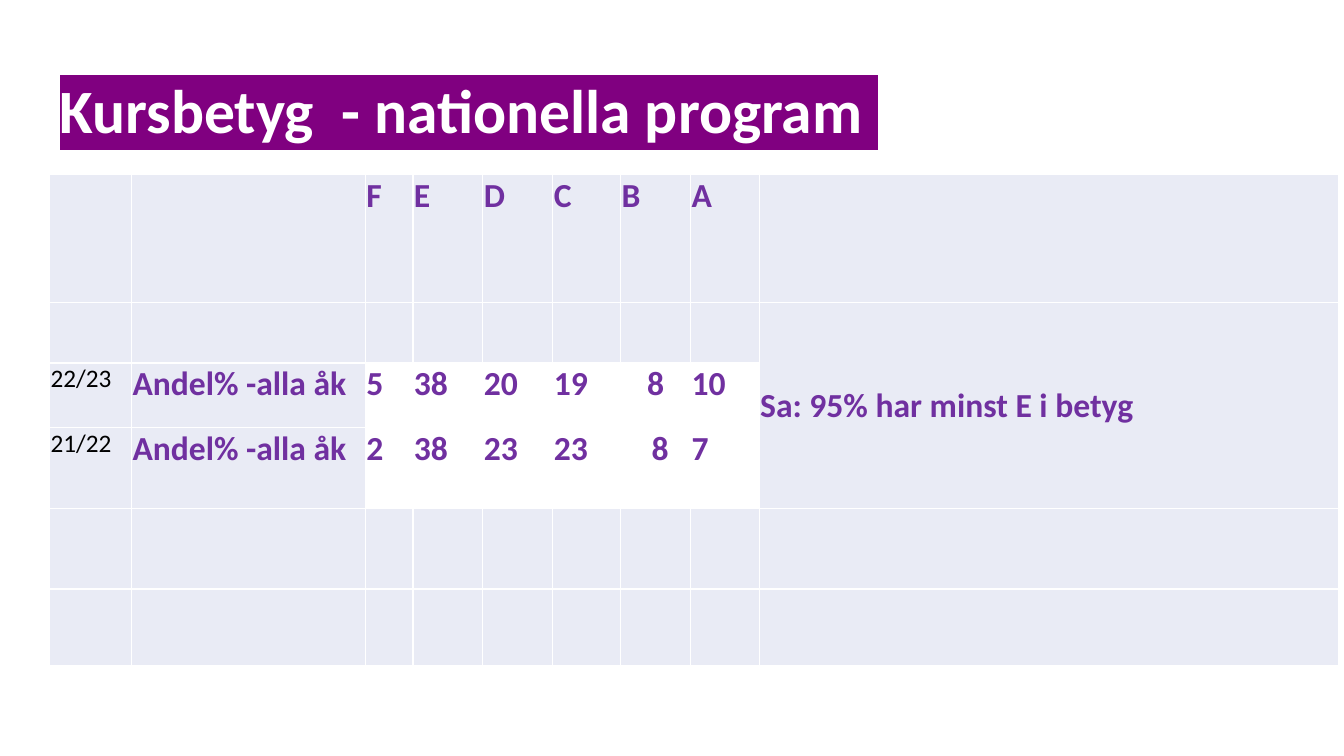
from lxml import etree
from pptx import Presentation
from pptx.dml.color import RGBColor
from pptx.enum.text import MSO_ANCHOR, PP_ALIGN
from pptx.oxml.ns import qn
from pptx.util import Pt

MIDDLE = MSO_ANCHOR.MIDDLE
CENTER = PP_ALIGN.CENTER
FONT = "Calibri"
COLORS = {
    "white": "FFFFFF",
    "black": "000000",
    "purple": "7030A0",
    "highlight": "800080",
    "cell": "E9EBF5",
}


def add_run(paragraph, text, size, color, bold=True):
    run = paragraph.add_run()
    run.text = text
    run.font.name = FONT
    run.font.size = Pt(size)
    run.font.bold = bold
    run.font.color.rgb = RGBColor.from_string(COLORS[color])
    return run


presentation = Presentation()
presentation.slide_width = Pt(960)
presentation.slide_height = Pt(540)
slide = presentation.slides.add_slide(presentation.slide_layouts[6])

# Title with highlighted text
title = slide.shapes.add_textbox(Pt(35.5), Pt(28.8), Pt(858), Pt(104.4))
title.text_frame.word_wrap = True
title.text_frame.vertical_anchor = MIDDLE
title_paragraph = title.text_frame.paragraphs[0]
title_paragraph.line_spacing = 0.9
title_run = add_run(title_paragraph, "Kursbetyg  - nationella program ", 44, "white")
highlight = etree.Element(qn("a:highlight"))
etree.SubElement(highlight, qn("a:srgbClr"), val=COLORS["highlight"])
title_run.font.fill  # the highlight follows the text fill
title_run.font._element.find(qn("a:solidFill")).addnext(highlight)

# Grade table: year, label, grades F to A, remark
column_widths = [58.5, 167, 34, 50, 50, 48.5, 50, 49, 414]
row_heights = [91.5, 43, 46, 58, 57.5, 55]
rows = [
    ["", "", "F", "E", "D", "C", "B", "A", ""],
    ["", "", "", "", "", "", "", "", "Sa: 95% har minst E i betyg"],
    ["22/23", "Andel% -alla åk", "5", "38", "20", "19", "8", "10", ""],
    ["21/22", "Andel% -alla åk", "2", "38", "23", "23", "8", "7", ""],
    [""] * 9,
    [""] * 9,
]
year_rows = (2, 3)
grade_columns = range(2, 8)
remark_column = 8

table = slide.shapes.add_table(
    len(rows), len(column_widths), Pt(35.5), Pt(124.8),
    Pt(sum(column_widths)), Pt(sum(row_heights)),
).table
table.first_row = False
table.horz_banding = False
for column, width in zip(table.columns, column_widths):
    column.width = Pt(width)
for row, height in zip(table.rows, row_heights):
    row.height = Pt(height)

for row_index, texts in enumerate(rows):
    for column_index, text in enumerate(texts):
        cell = table.cell(row_index, column_index)
        if row_index in year_rows and column_index in grade_columns:
            cell.fill.background()
        else:
            cell.fill.solid()
            cell.fill.fore_color.rgb = RGBColor.from_string(COLORS["cell"])
        if text:
            cell.margin_left = cell.margin_right = cell.margin_top = Pt(0.7)
            cell.margin_bottom = Pt(0)
            paragraph = cell.text_frame.paragraphs[0]
            if column_index == 0:
                add_run(paragraph, text, 18, "black", bold=False)
            else:
                add_run(paragraph, text, 24, "purple")

# The B grades stand further in than the others
table.cell(2, 6).text_frame.paragraphs[0].alignment = CENTER
table.cell(3, 6).margin_left = Pt(22)

# Remark spans three rows
remark = table.cell(1, remark_column)
remark.merge(table.cell(3, remark_column))
remark.vertical_anchor = MIDDLE

presentation.save("out.pptx")
